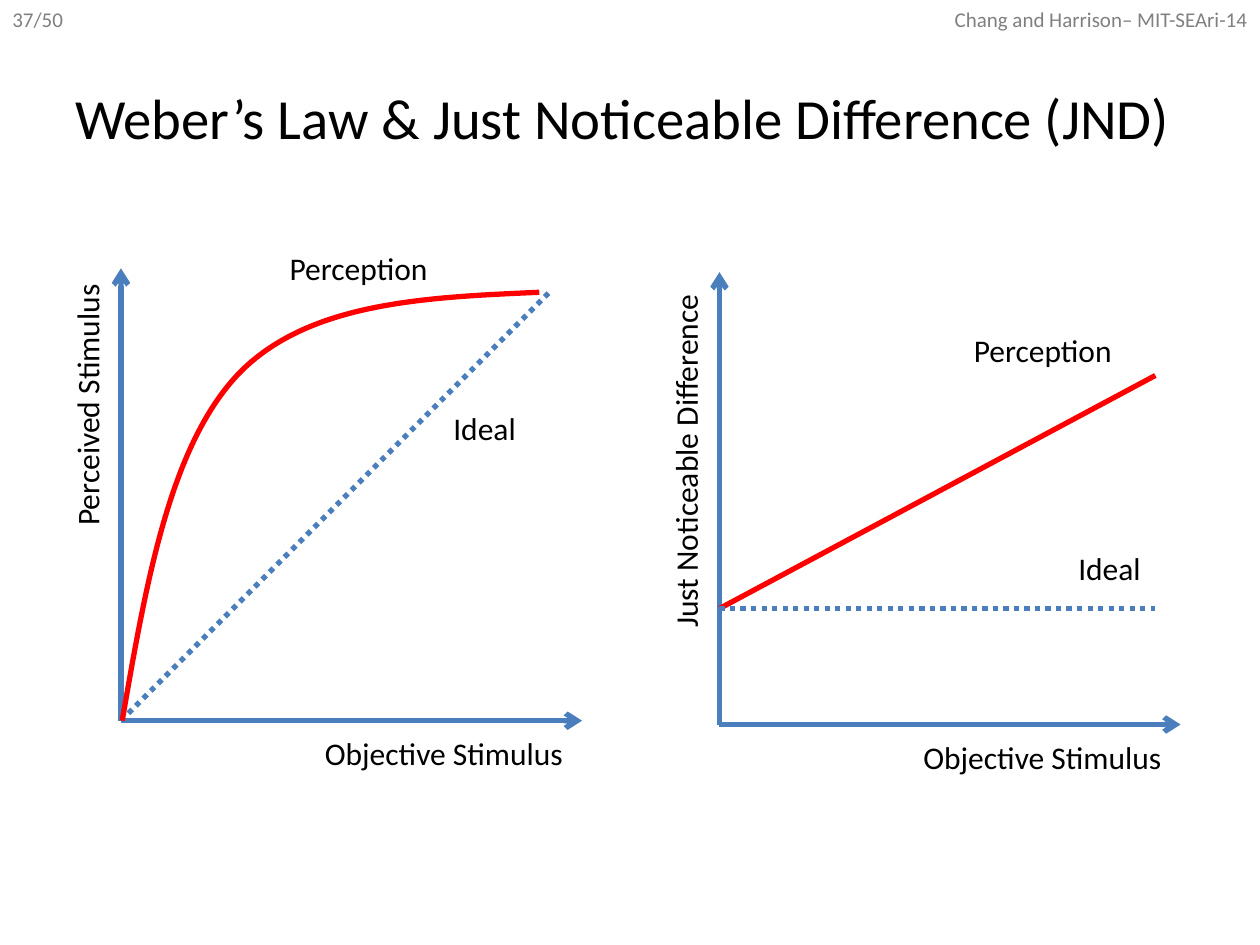
from lxml import etree
from pptx import Presentation
from pptx.dml.color import RGBColor
from pptx.enum.dml import MSO_LINE
from pptx.enum.shapes import MSO_CONNECTOR
from pptx.enum.text import MSO_ANCHOR, PP_ALIGN
from pptx.oxml.ns import qn
from pptx.util import Inches, Pt

STRAIGHT = MSO_CONNECTOR.STRAIGHT
DOTTED = MSO_LINE.ROUND_DOT
MIDDLE, TOP = MSO_ANCHOR.MIDDLE, MSO_ANCHOR.TOP
LEFT, RIGHT = PP_ALIGN.LEFT, PP_ALIGN.RIGHT
BLACK, GREY, BLUE, RED = "000000", "808080", "4B7EBC", "FF0000"


def color(value):
    return RGBColor.from_string(value)


class PlotSlide:
    font_name = "Calibri"
    line_width = Pt(3)
    label_height = 0.4

    def __init__(self, slide):
        self.slide = slide
        self.shapes = slide.shapes

    def text(self, words, left, top, width, height=label_height, size=18,
             ink=BLACK, align=LEFT, anchor=TOP, wrap=False, rotation=0):
        box = self.shapes.add_textbox(Inches(left), Inches(top), Inches(width), Inches(height))
        box.rotation = rotation
        frame = box.text_frame
        frame.word_wrap = wrap
        frame.vertical_anchor = anchor
        paragraph = frame.paragraphs[0]
        paragraph.text = words
        paragraph.alignment = align
        paragraph.font.name = self.font_name
        paragraph.font.size = Pt(size)
        paragraph.font.color.rgb = color(ink)

    def line(self, start, end, ink=BLUE, dash=None, arrow=False):
        connector = self.shapes.add_connector(STRAIGHT, *map(Inches, (*start, *end)))
        connector.line.color.rgb = color(ink)
        connector.line.width = self.line_width
        if dash:
            connector.line.dash_style = dash
        properties = connector._element.spPr
        if arrow:
            etree.SubElement(properties.find(qn("a:ln")), qn("a:tailEnd"), type="arrow")
        etree.SubElement(properties, qn("a:effectLst"))

    def curve(self, points, ink):
        start, *controls = [tuple(map(Inches, point)) for point in points]
        builder = self.shapes.build_freeform(*start)
        builder.add_line_segments(controls, close=False)
        shape = builder.convert_to_shape()
        segments = list(shape._element.iter(qn("a:lnTo")))
        for first in range(0, len(segments), 3):
            bezier = etree.Element(qn("a:cubicBezTo"))
            segments[first].addprevious(bezier)
            for segment in segments[first:first + 3]:
                bezier.append(segment[0])
                segment.getparent().remove(segment)
        shape.fill.background()
        shape.shadow.inherit = False
        shape.line.color.rgb = color(ink)
        shape.line.width = self.line_width

    def axes(self, origin, y_title, y_title_width, y_title_center):
        x, y = origin
        self.line(origin, (x + 3.66, y), arrow=True)
        self.line(origin, (x, y - 3.59), arrow=True)
        self.text("Objective Stimulus", x + 1.52, y + 0.06, 2.11)
        self.text(y_title, x - 0.27 - y_title_width / 2,
                  y_title_center - self.label_height / 2, y_title_width, rotation=270)

    def curve_labels(self, perception, ideal):
        self.text("Perception", *perception, 1.31)
        self.text("Ideal", *ideal, 0.7)


def main():
    presentation = Presentation()
    presentation.slide_width = Inches(10)
    presentation.slide_height = Inches(7.5)
    page = PlotSlide(presentation.slides.add_slide(presentation.slide_layouts[6]))

    page.text("37/50", 0, 0, 0.64, 0.3, size=12, ink=GREY)
    page.text("Chang and Harrison– MIT-SEAri-14", 7.44, 0, 2.56, 0.3,
              size=12, ink=GREY, align=RIGHT)
    page.text("Weber’s Law & Just Noticeable Difference (JND)", 0.5, 0.3, 9, 1.25,
              size=32.4, anchor=MIDDLE, wrap=True)

    stimulus_origin = (0.96, 5.72)
    page.axes(stimulus_origin, "Perceived Stimulus", 2.14, 3.2)
    page.line(stimulus_origin, (4.38, 2.3), dash=DOTTED)
    page.curve([(0.97, 5.72), (1.16, 4.62), (1.35, 3.53), (1.9, 2.96),
                (2.45, 2.4), (3.37, 2.36), (4.28, 2.32)], RED)
    page.curve_labels(perception=(2.2, 1.93), ideal=(3.5, 3.2))

    difference_origin = (5.71, 5.75)
    threshold = (5.71, 4.83)
    page.axes(difference_origin, "Just Noticeable Difference", 2.88, 3.64)
    page.line(threshold, (9.17, 2.98), ink=RED)
    page.line(threshold, (9.17, 4.83), dash=DOTTED)
    page.curve_labels(perception=(7.63, 2.58), ideal=(8.46, 4.31))

    presentation.save("out.pptx")


if __name__ == "__main__":
    main()
